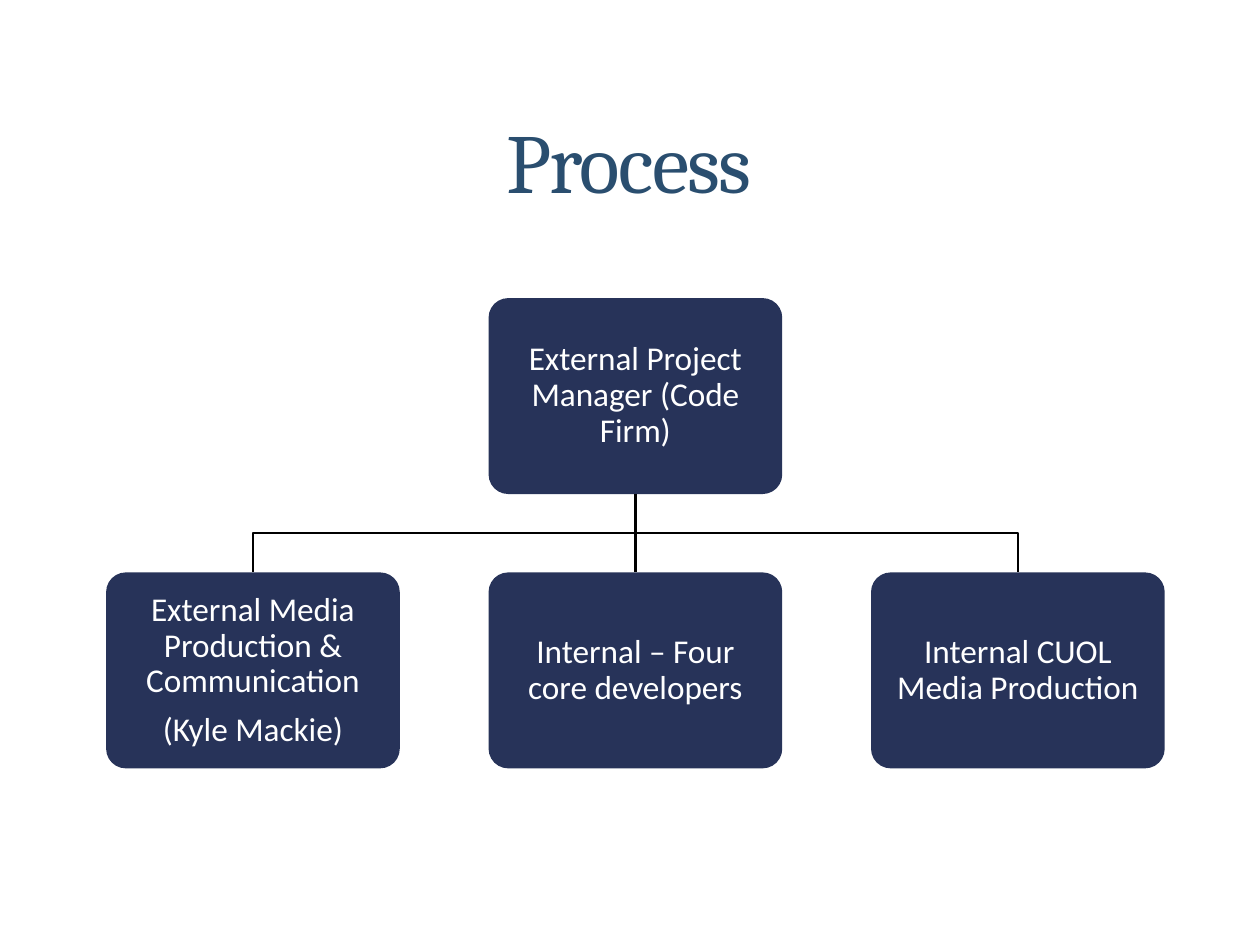
"""Build the Process slide: a two-level organisation chart."""
from lxml.etree import SubElement
from pptx import Presentation
from pptx.dml.color import RGBColor
from pptx.enum.shapes import MSO_CONNECTOR, MSO_SHAPE
from pptx.enum.text import MSO_ANCHOR, PP_ALIGN
from pptx.oxml.ns import qn
from pptx.util import Cm, Pt

TITLE = "Process"
MANAGER = ["External Project Manager (Code Firm)"]
TEAMS = [
    ["External Media Production & Communication", "(Kyle Mackie)"],
    ["Internal – Four core developers"],
    ["Internal CUOL Media Production"],
]
NAVY, BLUE, WHITE, BLACK = "273359", "2A4E6F", "FFFFFF", "000000"
LEFT, PITCH = 2.14, 7.71
MANAGER_TOP, TEAM_TOP = 6.01, 11.54
BOX_WIDTH, BOX_HEIGHT = 5.92, 3.95


def color(value):
    return RGBColor.from_string(value)


def add_span(para, text, font, size, value):
    para.alignment = PP_ALIGN.CENTER
    span = para.add_run()
    span.text = text
    span.font.name = font
    span.font.size = Pt(size)
    span.font.color.rgb = color(value)
    return span


def add_title(page):
    box = page.shapes.add_textbox(Cm(1.52), Cm(1.22), Cm(22.33), Cm(4.01))
    frame = box.text_frame
    frame.word_wrap = True
    frame.vertical_anchor = MSO_ANCHOR.MIDDLE
    span = add_span(frame.paragraphs[0], TITLE, "Cambria", 48, BLUE)
    span.font._element.set("spc", "-100")


def add_box(page, column, top, lines):
    box = page.shapes.add_shape(
        MSO_SHAPE.ROUNDED_RECTANGLE,
        Cm(LEFT + column * PITCH), Cm(top), Cm(BOX_WIDTH), Cm(BOX_HEIGHT),
    )
    box.adjustments[0] = 0.1
    box.shadow.inherit = False
    box.fill.solid()
    box.fill.fore_color.rgb = color(NAVY)
    box.line.fill.background()
    frame = box.text_frame
    frame.word_wrap = True
    frame.vertical_anchor = MSO_ANCHOR.MIDDLE
    frame.margin_left = frame.margin_right = Cm(0.2)
    frame.margin_top = frame.margin_bottom = Cm(0.2)
    for index, text in enumerate(lines):
        para = frame.add_paragraph() if index else frame.paragraphs[0]
        para.line_spacing = 0.9
        if index:
            para.space_before = Pt(7)
        add_span(para, text, "Calibri", 19, WHITE)
    return box


def style_line(shape):
    shape.line.color.rgb = color(BLACK)
    shape.line.width = Pt(1.5)


def add_branch(page, parent, child):
    start_x = parent.left + parent.width // 2
    start_y = parent.top + parent.height
    end_x = child.left + child.width // 2
    if start_x == end_x:
        branch = page.shapes.add_connector(
            MSO_CONNECTOR.STRAIGHT, start_x, start_y, end_x, child.top
        )
        branch.begin_connect(parent, 2)
        branch.end_connect(child, 0)
        SubElement(branch._element.spPr, qn("a:effectLst"))
    else:
        middle_y = (start_y + child.top) // 2
        builder = page.shapes.build_freeform(start_x, start_y)
        builder.add_line_segments(
            [(start_x, middle_y), (end_x, middle_y), (end_x, child.top)], close=False
        )
        branch = builder.convert_to_shape()
        branch.fill.background()
        branch.shadow.inherit = False
    style_line(branch)


def main():
    deck = Presentation()
    deck.slide_width, deck.slide_height = Cm(25.4), Cm(19.05)
    page = deck.slides.add_slide(deck.slide_layouts[6])
    add_title(page)
    manager = add_box(page, 1, MANAGER_TOP, MANAGER)
    for column, lines in enumerate(TEAMS):
        team = add_box(page, column, TEAM_TOP, lines)
        add_branch(page, manager, team)
    deck.save("out.pptx")


if __name__ == "__main__":
    main()
